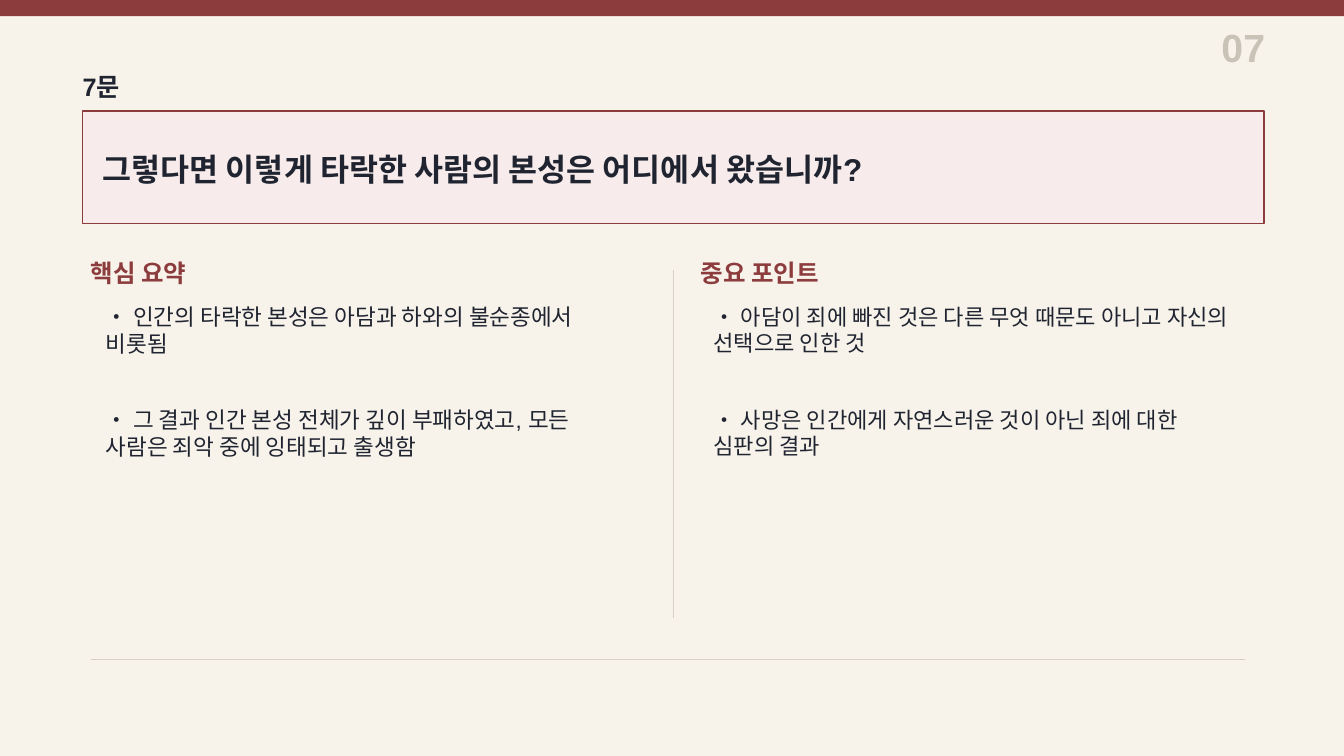
from pptx import Presentation, util as u
from pptx.dml.color import RGBColor
from pptx.enum import shapes, text
from pptx.oxml.ns import qn
from lxml import etree

CREAM = RGBColor(0xF7, 0xF3, 0xEB)
MAROON = RGBColor(0x8C, 0x3C, 0x3C)
BLUSH = RGBColor(0xF7, 0xEC, 0xEB)
INK = RGBColor(0x1F, 0x24, 0x30)
STONE = RGBColor(0xC9, 0xC2, 0xB7)
RULE = RGBColor(0xD8, 0xD0, 0xC2)


class Board:
    """Holds the style and the current slide; all lengths are points."""
    font = "Arial"

    def __init__(self, slide, background):
        self.slide = slide
        slide.background.fill.solid()
        slide.background.fill.fore_color.rgb = background

    def panel(self, left, top, width, height, fill, border=None):
        panel = self.slide.shapes.add_shape(
            shapes.MSO_SHAPE.RECTANGLE, *map(u.Pt, (left, top, width, height)))
        panel.shadow.inherit = False
        panel.fill.solid()
        panel.fill.fore_color.rgb = fill
        if border is None:
            panel.line.fill.background()
        else:
            panel.line.color.rgb = border
            panel.line.width = u.Pt(1.2)

    def rule(self, x1, y1, x2, y2):
        rule = self.slide.shapes.add_connector(
            shapes.MSO_CONNECTOR.STRAIGHT, *map(u.Pt, (x1, y1, x2, y2)))
        rule.line.color.rgb = RULE
        rule.line.width = u.Pt(1)
        etree.SubElement(rule._element.spPr, qn("a:effectLst"))

    def label(self, words, left, top, width, height, size, color=INK, bold=True,
              align=text.PP_ALIGN.LEFT, anchor=text.MSO_ANCHOR.MIDDLE, inset=(0, 0)):
        frame = self.slide.shapes.add_textbox(
            *map(u.Pt, (left, top, width, height))).text_frame
        frame.word_wrap = True
        frame.vertical_anchor = anchor
        frame.margin_left = frame.margin_right = u.Pt(inset[0])
        frame.margin_top = frame.margin_bottom = u.Pt(inset[1])
        paragraph = frame.paragraphs[0]
        paragraph.alignment = align
        run = paragraph.add_run()
        run.text = words
        run.font.name = self.font
        run.font.size = u.Pt(size)
        run.font.bold = bold
        run.font.color.rgb = color

    def column(self, heading, points, heading_left, points_left, size, height):
        self.label(heading, heading_left, 185.8, 216, 17.3, 17.5, MAROON)
        for row, point in enumerate(points):
            self.label(point, points_left, 213.1 + row * 73.4, 387.4, height, size,
                       bold=False, anchor=text.MSO_ANCHOR.TOP, inset=(7.2, 3.6))


def main():
    deck = Presentation()
    deck.slide_width, deck.slide_height = u.Pt(960), u.Pt(540)
    board = Board(deck.slides.add_slide(deck.slide_layouts[6]), CREAM)

    # Top band and numbering
    board.panel(0, 0, 960, 11.5, MAROON)
    board.label("07", 831.6, 15.8, 72, 36, 28, STONE, align=text.PP_ALIGN.RIGHT)
    board.label("7문", 59, 51.8, 64.8, 20.2, 18)

    # Question
    board.panel(59, 79.2, 843.8, 80.6, BLUSH, MAROON)
    board.label("그렇다면 이렇게 타락한 사람의 본성은 어디에서 왔습니까?",
                73.4, 96.5, 812.2, 49, 22.5)

    # Summary and key points, with the divider between them
    board.rule(481, 193, 481, 441.4)
    board.column("핵심 요약", [
        "• 인간의 타락한 본성은 아담과 하와의 불순종에서 비롯됨",
        "• 그 결과 인간 본성 전체가 깊이 부패하였고, 모든 사람은 죄악 중에 잉태되고 출생함",
    ], 64.8, 68.4, 16.1, 60.5)
    board.column("중요 포인트", [
        "• 아담이 죄에 빠진 것은 다른 무엇 때문도 아니고 자신의 선택으로 인한 것",
        "• 사망은 인간에게 자연스러운 것이 아닌 죄에 대한 심판의 결과",
    ], 500.4, 502.6, 15.8, 80.6)

    # Footer rule
    board.rule(64.8, 470.9, 889.2, 470.9)

    deck.save("out.pptx")


if __name__ == "__main__":
    main()
